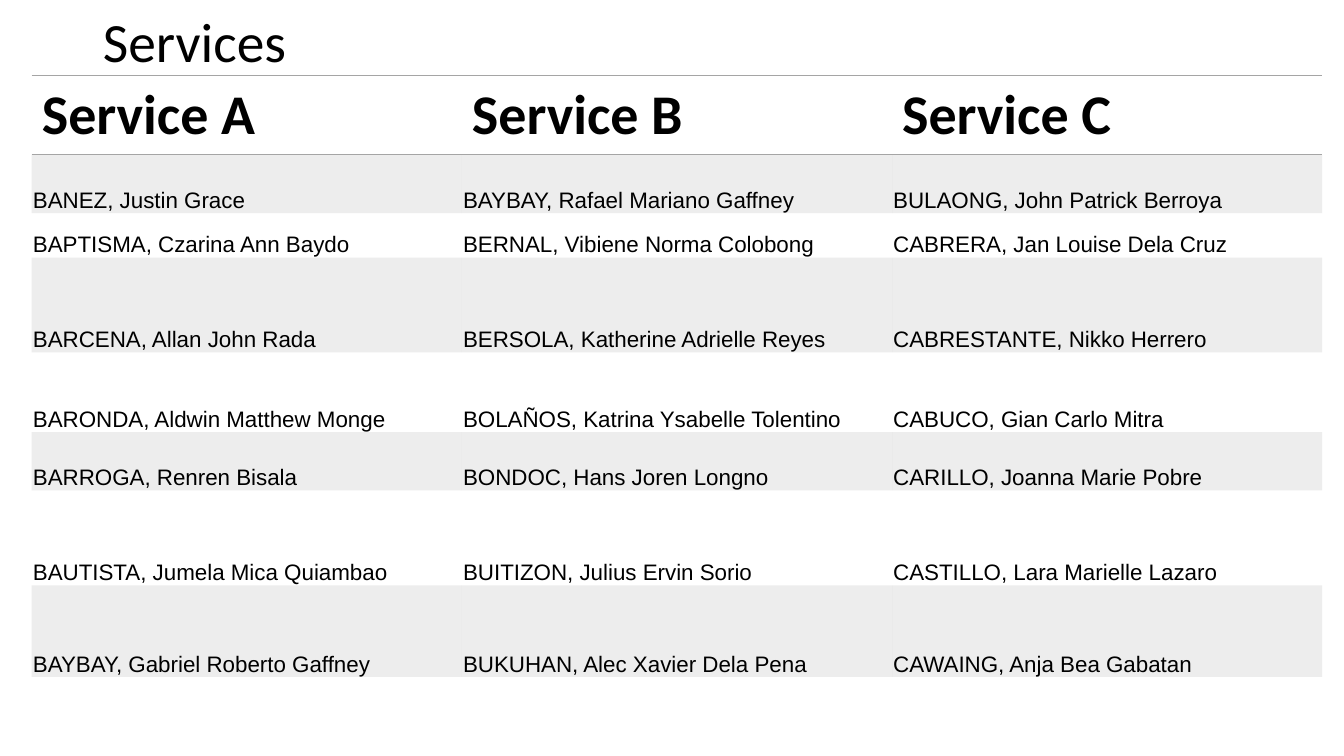
from dataclasses import dataclass

from lxml import etree
from pptx import Presentation
from pptx.dml.color import RGBColor
from pptx.enum.text import MSO_ANCHOR, MSO_AUTO_SIZE, PP_ALIGN
from pptx.util import Cm, Pt

LEFT = PP_ALIGN.LEFT
TOP, MIDDLE, BOTTOM = MSO_ANCHOR.TOP, MSO_ANCHOR.MIDDLE, MSO_ANCHOR.BOTTOM
NO_AUTOFIT = MSO_AUTO_SIZE.NONE
DRAWING = "http://schemas.openxmlformats.org/drawingml/2006/main"
PLAIN_TABLE_STYLE = "{2D5ABB26-0587-4C30-8999-92F81FD0307C}"


@dataclass(frozen=True)
class Theme:
    text: str = "000000"
    gray: str = "A5A5A5"
    band_alpha: int = 20000
    heading_font: str = "Calibri"
    body_font: str = "Arial"
    title_size: float = 39.6
    heading_size: float = 40
    body_size: float = 16
    border_width: float = 1


theme = Theme()

services = {
    "Service A": [
        "BANEZ, Justin Grace",
        "BAPTISMA, Czarina Ann Baydo",
        "BARCENA, Allan John Rada",
        "BARONDA, Aldwin Matthew Monge",
        "BARROGA, Renren Bisala",
        "BAUTISTA, Jumela Mica Quiambao",
        "BAYBAY, Gabriel Roberto Gaffney",
    ],
    "Service B": [
        "BAYBAY, Rafael Mariano Gaffney",
        "BERNAL, Vibiene Norma Colobong",
        "BERSOLA, Katherine Adrielle Reyes",
        "BOLAÑOS, Katrina Ysabelle Tolentino",
        "BONDOC, Hans Joren Longno",
        "BUITIZON, Julius Ervin Sorio",
        "BUKUHAN, Alec Xavier Dela Pena",
    ],
    "Service C": [
        "BULAONG, John Patrick Berroya",
        "CABRERA, Jan Louise Dela Cruz",
        "CABRESTANTE, Nikko Herrero",
        "CABUCO, Gian Carlo Mitra",
        "CARILLO, Joanna Marie Pobre",
        "CASTILLO, Lara Marielle Lazaro",
        "CAWAING, Anja Bea Gabatan",
    ],
}
row_heights = [1.99, 1.47, 1.12, 2.39, 2.01, 1.47, 2.39, 2.31, 1.68]
column_width = 10.84


def add_run(paragraph, text, font_name, size, bold=False):
    run = paragraph.add_run()
    run.text = text
    run.font.name = font_name
    run.font.size = Pt(size)
    run.font.bold = bold
    run.font.color.rgb = RGBColor.from_string(theme.text)


def add_borders(cell):
    properties = cell._tc.get_or_add_tcPr()
    for position, edge in enumerate(("lnT", "lnB")):
        line = etree.Element(f"{{{DRAWING}}}{edge}", w=str(Pt(theme.border_width)))
        fill = etree.SubElement(line, f"{{{DRAWING}}}solidFill")
        etree.SubElement(fill, f"{{{DRAWING}}}srgbClr", val=theme.gray)
        properties.insert(position, line)


presentation = Presentation()
presentation.slide_width = Cm(33.87)
presentation.slide_height = Cm(19.05)
slide = presentation.slides.add_slide(presentation.slide_layouts[5])

title = slide.shapes.title
title.left, title.top, title.width, title.height = Cm(2.34), Cm(0.3), Cm(29.21), Cm(1.63)
title.text_frame.auto_size = NO_AUTOFIT
title.text_frame.vertical_anchor = MIDDLE
title_paragraph = title.text_frame.paragraphs[0]
title_paragraph.alignment = LEFT
title_paragraph.line_spacing = 0.9
add_run(title_paragraph, "Services", theme.heading_font, theme.title_size)

table_frame = slide.shapes.add_table(
    len(row_heights), len(services), Cm(0.8), Cm(1.91),
    Cm(column_width * len(services)), Cm(sum(row_heights)))
table = table_frame.table
table._tbl.tblPr.find(f"{{{DRAWING}}}tableStyleId").text = PLAIN_TABLE_STYLE
for row, height in zip(table.rows, row_heights):
    row.height = Cm(height)
for column in table.columns:
    column.width = Cm(column_width)

for column_index, (service, names) in enumerate(services.items()):
    heading = table.cell(0, column_index)
    heading.vertical_anchor = TOP
    heading.fill.background()
    add_borders(heading)
    add_run(heading.text_frame.paragraphs[0], service,
            theme.heading_font, theme.heading_size, bold=True)

    for row_index, name in enumerate(names, start=1):
        cell = table.cell(row_index, column_index)
        cell.vertical_anchor = BOTTOM
        cell.margin_left = cell.margin_top = cell.margin_right = Cm(0.03)
        cell.margin_bottom = Cm(0)
        add_run(cell.text_frame.paragraphs[0], name, theme.body_font, theme.body_size)
        if row_index % 2:
            cell.fill.solid()
            cell.fill.fore_color.rgb = RGBColor.from_string(theme.gray)
            color = cell._tc.tcPr.find(f".//{{{DRAWING}}}srgbClr")
            etree.SubElement(color, f"{{{DRAWING}}}alpha", val=str(theme.band_alpha))
        else:
            cell.fill.background()

    table.cell(len(row_heights) - 1, column_index).fill.background()

presentation.save("out.pptx")
